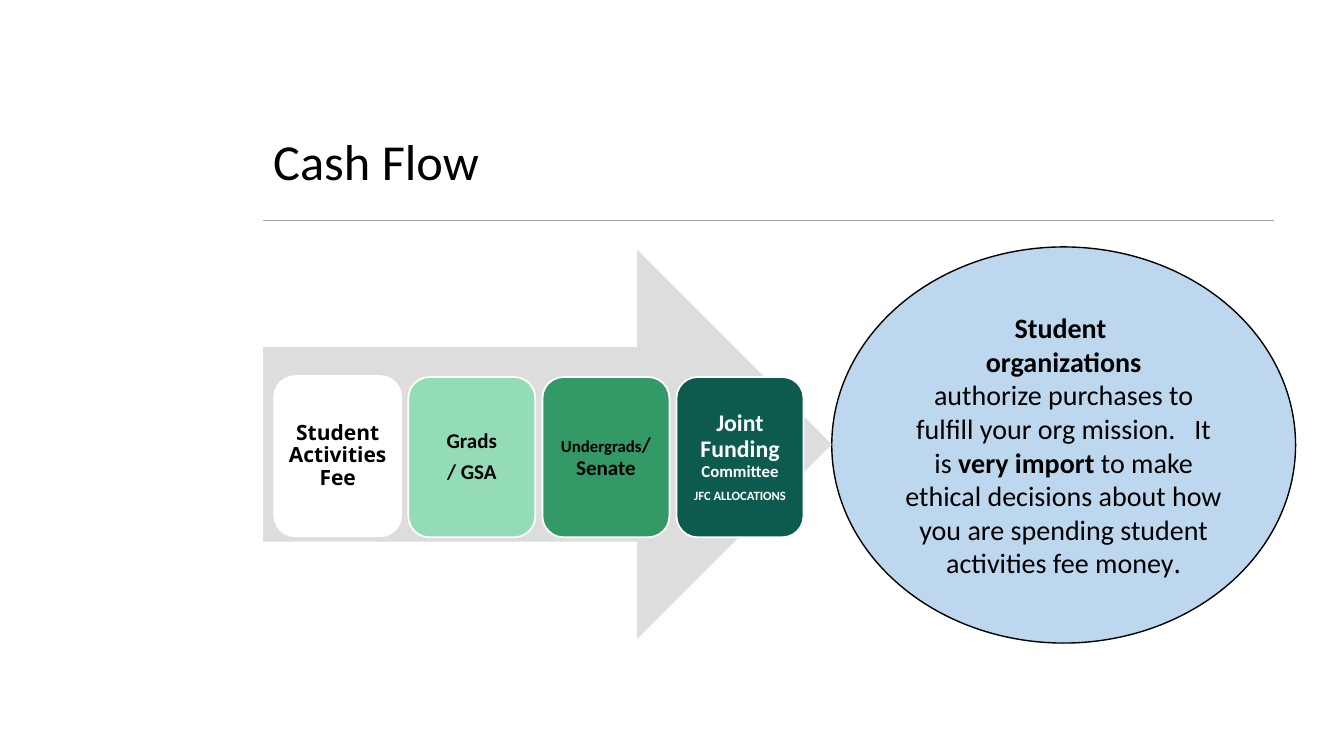
from dataclasses import dataclass

from lxml import etree
from pptx import Presentation
from pptx.dml.color import RGBColor
from pptx.enum.shapes import MSO_CONNECTOR, MSO_SHAPE
from pptx.enum.text import MSO_ANCHOR, MSO_AUTO_SIZE, PP_ALIGN
from pptx.oxml.ns import qn
from pptx.util import Inches, Pt

CENTER, LEFT = PP_ALIGN.CENTER, PP_ALIGN.LEFT
MIDDLE = MSO_ANCHOR.MIDDLE
NO_AUTOFIT = MSO_AUTO_SIZE.NONE
STRAIGHT = MSO_CONNECTOR.STRAIGHT
ELLIPSE, ARROW, CARD = MSO_SHAPE.OVAL, MSO_SHAPE.RIGHT_ARROW, MSO_SHAPE.ROUNDED_RECTANGLE

BLACK, WHITE = "000000", "FFFFFF"
MARGIN_LEFT = 2.61
CARD_LEFT, CARD_STEP = 2.72, 1.33
CARD_WIDTH, CARD_HEIGHT = 1.26, 1.59


@dataclass
class Span:
    text: str
    size: float
    bold: bool = True
    font: str = "Calibri"


@dataclass
class Stage:
    fill: str
    paragraphs: list[list[Span]]
    top: float = 3.74
    color: str = BLACK
    space_before: float = 6


STAGES = [
    Stage(WHITE, [[Span("Student Activities Fee", 15, font="Open Sans")]], top=3.73),
    Stage("94DCB8", [[Span("Grads", 15)], [Span("/ GSA", 15)]], space_before=5.6),
    Stage("339966", [[Span("Undergrads", 12), Span("/ Senate", 15)]]),
    Stage("0D5B4E", [[Span("Joint Funding ", 17), Span("Committee", 12)],
                     [Span("JFC ALLOCATIONS", 9)]], color=WHITE),
]

ORGANIZATIONS = [
    [Span("Student ", 20)],
    [Span("organizations", 20)],
    [Span("authorize purchases to fulfill your org mission.   It is ", 20, False),
     Span("very import ", 20),
     Span("to make ethical decisions about how you are spending student "
          "activities fee money", 20, False),
     Span(".", 20, False, "Open Sans")],
]


def rgb(color: str) -> RGBColor:
    return RGBColor.from_string(color)


def write(frame, paragraphs: list[list[Span]], color: str, align=CENTER,
          line_spacing: float = 0.9, space_before: float = 0) -> None:
    frame.word_wrap = True
    frame.vertical_anchor = MIDDLE
    for index, spans in enumerate(paragraphs):
        para = frame.paragraphs[0] if index == 0 else frame.add_paragraph()
        para.alignment = align
        para.line_spacing = line_spacing
        para.space_before = Pt(space_before if index else 0)
        for span in spans:
            run = para.add_run()
            run.text = span.text
            run.font.name = span.font
            run.font.size = Pt(span.size)
            run.font.bold = span.bold
            run.font.color.rgb = rgb(color)


def add_filled(page, kind, left: float, top: float, width: float, height: float,
               fill: str, line: str | None = None, line_width: float = 1,
               inset: float = 0.05):
    shape = page.shapes.add_shape(kind, Inches(left), Inches(top), Inches(width), Inches(height))
    shape.shadow.inherit = False
    shape.fill.solid()
    shape.fill.fore_color.rgb = rgb(fill)
    if line:
        shape.line.color.rgb = rgb(line)
        shape.line.width = Pt(line_width)
    else:
        shape.line.fill.background()
    frame = shape.text_frame
    frame.margin_left = frame.margin_right = Inches(inset)
    frame.margin_top = frame.margin_bottom = Inches(inset)
    return shape


def add_heading(page) -> None:
    title = page.shapes.title
    title.left, title.top = Inches(MARGIN_LEFT), Inches(1.27)
    title.width, title.height = Inches(6.43), Inches(0.71)
    title.text_frame.auto_size = NO_AUTOFIT
    write(title.text_frame, [[Span("Cash Flow", 36, False)]], BLACK, LEFT)

    rule = page.shapes.add_connector(
        STRAIGHT, Inches(MARGIN_LEFT), Inches(2.19), Inches(12.64), Inches(2.19))
    rule.line.color.rgb = rgb("A6A6A6")
    rule.line.width = Pt(1)
    etree.SubElement(rule._element.spPr, qn("a:effectLst"))


def add_stage(page, index: int, stage: Stage) -> None:
    card = add_filled(page, CARD, CARD_LEFT + index * CARD_STEP, stage.top,
                      CARD_WIDTH, CARD_HEIGHT, stage.fill, WHITE, 1.25, inset=0.07)
    write(card.text_frame, stage.paragraphs, stage.color, space_before=stage.space_before)


def main() -> None:
    deck = Presentation()
    deck.slide_width, deck.slide_height = Inches(13.33), Inches(7.5)
    page = deck.slides.add_slide(deck.slide_layouts.get_by_name("Title Only"))

    add_heading(page)
    organizations = add_filled(page, ELLIPSE, 8.25, 2.45, 4.6, 3.93, "BDD7EE", BLACK)
    write(organizations.text_frame, ORGANIZATIONS, BLACK, line_spacing=1.0)
    add_filled(page, ARROW, MARGIN_LEFT, 2.48, 5.64, 3.86, "DDDDDD")
    for index, stage in enumerate(STAGES):
        add_stage(page, index, stage)

    deck.save("out.pptx")


if __name__ == "__main__":
    main()
